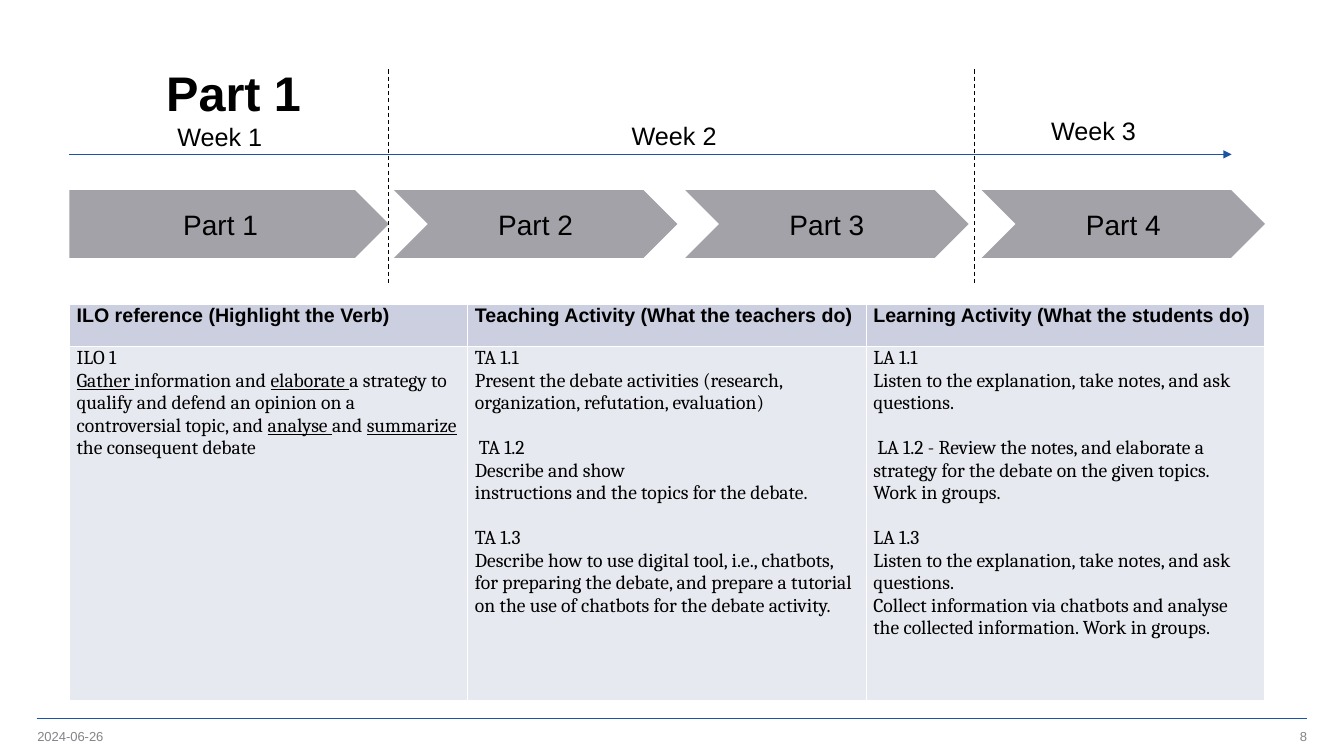
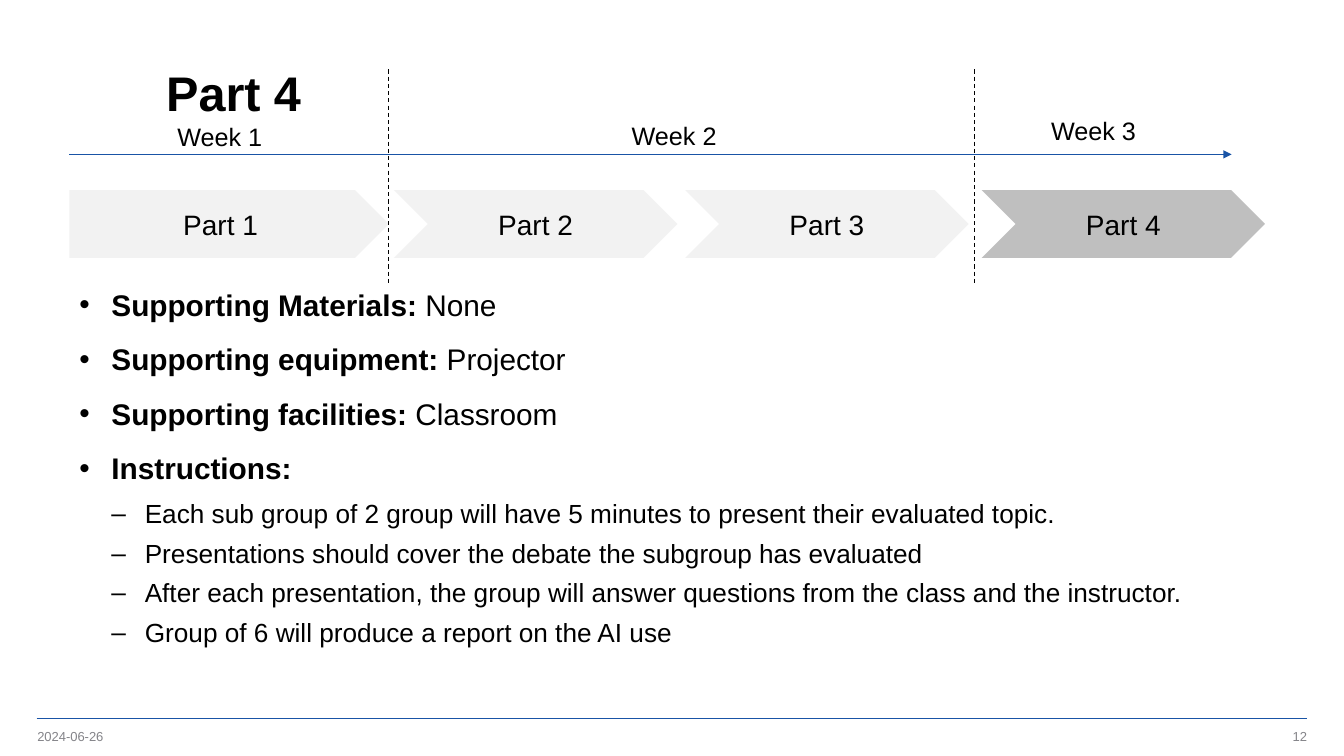
from lxml.etree import SubElement
from pptx import Presentation
from pptx.dml.color import RGBColor
from pptx.enum.dml import MSO_LINE_DASH_STYLE as Dash
from pptx.enum.shapes import MSO_CONNECTOR as Connector, MSO_SHAPE as Shape
from pptx.enum.text import MSO_ANCHOR as Anchor, PP_ALIGN as Align
from pptx.oxml.ns import qn
from pptx.util import Cm, Pt

BLACK = RGBColor(0x00, 0x00, 0x00)
WHITE = RGBColor(0xFF, 0xFF, 0xFF)
BLUE = RGBColor(0x19, 0x54, 0xA6)
FOOTER_GRAY = RGBColor(0x84, 0x84, 0x89)
STEP_GRAY = RGBColor(0xA2, 0xA2, 0xA8)
PALE_GRAY = RGBColor(0xF2, 0xF2, 0xF2)
ACTIVE_GRAY = RGBColor(0xBF, 0xBF, 0xBF)
HEADER_FILL = RGBColor(0xCB, 0xCF, 0xE0)
BODY_FILL = RGBColor(0xE7, 0xE9, 0xF0)

LEFT = 1.75
STEPS = [
    ("Part 1", Shape.PENTAGON, LEFT, 8.05),
    ("Part 2", Shape.CHEVRON, 9.93, 7.14),
    ("Part 3", Shape.CHEVRON, 17.27, 7.14),
    ("Part 4", Shape.CHEVRON, 24.74, 7.14),
]
WEEKS = [("Week 1", 4.22, 2.92), ("Week 2", 15.67, 2.9), ("Week 3", 26.24, 2.79)]
WEEK_BREAKS = [9.8, 24.56]

HEADERS = [
    "ILO reference (Highlight the Verb)",
    "Teaching Activity (What the teachers do)",
    "Learning Activity (What the students do)",
]
ACTIVITIES = [
    [
        [
            "ILO 1",
            "|Gather |information and |elaborate |a strategy to qualify and defend an opinion "
            "on a controversial topic, and |analyse |and |summarize |the consequent debate",
        ],
    ],
    [
        [
            "TA 1.1",
            "Present the debate activities (research, organization, refutation, evaluation)",
        ],
        [
            "TA 1.2",
            "Describe and show",
            "instructions and the topics for the debate.",
        ],
        [
            "TA 1.3",
            "Describe how to use digital tool, i.e., chatbots, for preparing the debate, "
            "and prepare a tutorial on the use of chatbots for the debate activity.",
        ],
    ],
    [
        [
            "LA 1.1",
            "Listen to the explanation, take notes, and ask questions.",
        ],
        [
            "LA 1.2 - Review the notes, and elaborate a strategy for the debate "
            "on the given topics. Work in groups.",
        ],
        [
            "LA 1.3",
            "Listen to the explanation, take notes, and ask questions.",
            "Collect information via chatbots and analyse the collected information. "
            "Work in groups.",
        ],
    ],
]
REQUIREMENTS = [
    "|Supporting Materials: |None",
    "|Supporting equipment: |Projector",
    "|Supporting facilities: |Classroom",
    "|Instructions:",
]
INSTRUCTIONS = [
    "Each sub group of 2 group will have 5 minutes to present their evaluated topic.",
    "Presentations should cover the debate the subgroup has evaluated",
    "After each presentation, the group will answer questions from the class and the instructor.",
    "Group of 6 will produce a report on the AI use",
]


class Lesson:
    def __init__(self):
        self.deck = Presentation()
        self.deck.slide_width, self.deck.slide_height = Cm(33.87), Cm(19.05)
        self.slide = None

    def start(self, title, number, fills):
        self.slide = self.deck.slides.add_slide(self.deck.slide_layouts[6])
        self.line(0.92, 18.11, 32.94, 18.11, BLUE, 1)
        heading = self.text(title, 3.94, 0.94, 27.97, 2.49, 34.7, bold=True, anchor=Anchor.MIDDLE)
        heading.line_spacing = 1.18
        for words, left, align in (("2024-06-26", 0.94, Align.LEFT), (number, 25.32, Align.RIGHT)):
            self.text(words, left, 18.34, 7.62, 0.43, 9.3, FOOTER_GRAY,
                      anchor=Anchor.MIDDLE, align=align, inset=0)
        self.timeline(fills)

    def timeline(self, fills):
        for (label, kind, left, width), fill in zip(STEPS, fills):
            self.step(label, kind, left, width, fill)
        self.line(LEFT, 3.89, 31.04, 3.89, BLUE, 0.75, arrow=True)
        for x in WEEK_BREAKS:
            self.line(x, LEFT, x, 7.2, BLACK, 0.75, dashed=True)
        for label, left, top in WEEKS:
            self.text(label, left, top, 2.67, 1.02, 18, wrap=False)

    def fill_para(self, para, words, size, color=BLACK, bold=False, name="Arial",
                  emphasis="bold"):
        para.font.name, para.font.size, para.font.bold = name, Pt(size), bold
        para.font.color.rgb = color
        for index, part in enumerate(words.split("|")):
            if part:
                span = para.add_run()
                span.text = part
                if index % 2 and emphasis == "bold":
                    span.font.bold = True
                elif index % 2:
                    span.font.underline = True

    def frame(self, left, top, width, height, anchor=Anchor.TOP, inset=None, wrap=True):
        box = self.slide.shapes.add_textbox(Cm(left), Cm(top), Cm(width), Cm(height))
        frame = box.text_frame
        frame.word_wrap, frame.vertical_anchor = wrap, anchor
        if inset is not None:
            frame.margin_left = frame.margin_right = Cm(inset)
            frame.margin_top = frame.margin_bottom = Cm(inset)
        return frame

    def text(self, words, left, top, width, height, size, color=BLACK, bold=False,
             align=Align.LEFT, **layout):
        para = self.frame(left, top, width, height, **layout).paragraphs[0]
        para.alignment = align
        self.fill_para(para, words, size, color, bold)
        return para

    def line(self, x1, y1, x2, y2, color, width, dashed=False, arrow=False):
        rule = self.slide.shapes.add_connector(Connector.STRAIGHT, Cm(x1), Cm(y1), Cm(x2), Cm(y2))
        rule.line.color.rgb, rule.line.width = color, Pt(width)
        if dashed:
            rule.line.dash_style = Dash.DASH
        properties = rule.element.spPr
        if arrow:
            SubElement(properties.find(qn("a:ln")), qn("a:tailEnd"), type="triangle")
        SubElement(properties, qn("a:effectLst"))

    def step(self, label, kind, left, width, fill):
        shape = self.slide.shapes.add_shape(kind, Cm(left), Cm(4.79), Cm(width), Cm(1.71))
        shape.shadow.inherit = False
        shape.fill.solid()
        shape.fill.fore_color.rgb = fill
        shape.line.fill.background()
        shape.text_frame.vertical_anchor = Anchor.MIDDLE
        para = shape.text_frame.paragraphs[0]
        para.alignment = Align.CENTER
        self.fill_para(para, label, 20)

    def cell(self, cell, blocks, fill, **style):
        cell.margin_left = cell.margin_right = Cm(0.18)
        cell.margin_top = cell.margin_bottom = 0
        properties = cell._tc.get_or_add_tcPr()
        for side in ("a:lnL", "a:lnR", "a:lnT", "a:lnB"):
            edge = SubElement(properties, qn(side), w=str(Pt(1)))
            SubElement(SubElement(edge, qn("a:solidFill")), qn("a:srgbClr"), val=str(WHITE))
        cell.fill.solid()
        cell.fill.fore_color.rgb = fill
        frame = cell.text_frame
        for number, block in enumerate(blocks):
            for index, words in enumerate(block):
                opening = index == 0
                para = frame.add_paragraph() if number or index else frame.paragraphs[0]
                if opening and number:
                    para.space_before = Pt(16)
                if opening and number == 1:
                    para._p.get_or_add_pPr().set("indent", str(Cm(0.1)))
                self.fill_para(para, words, 14, emphasis="underline", **style)

    def table(self, headers, columns):
        grid = self.slide.shapes.add_table(
            2, len(headers), Cm(LEFT), Cm(7.67), Cm(30.12), Cm(9.99)).table
        grid.first_row = grid.horz_banding = False
        grid.rows[0].height, grid.rows[1].height = Cm(1.07), Cm(8.92)
        for index, (header, blocks) in enumerate(zip(headers, columns)):
            grid.columns[index].width = Cm(10.04)
            self.cell(grid.cell(0, index), [[header]], HEADER_FILL, bold=True)
            self.cell(grid.cell(1, index), blocks, BODY_FILL, name="Cambria")

    def bullets(self, items, details):
        frame = self.frame(LEFT, 7.19, 30.2, 9.45)
        rows = [(words, 0, 16) for words in items]
        rows += [(words, 1, 8 if index else 10.7) for index, words in enumerate(details)]
        for index, (words, level, gap) in enumerate(rows):
            para = frame.add_paragraph() if index else frame.paragraphs[0]
            para.level, para.line_spacing = level, 0.9
            if index:
                para.space_before = Pt(gap)
            properties = para._p.get_or_add_pPr()
            properties.set("marL", str(Cm((0.81, 1.65)[level])))
            properties.set("indent", str(-Cm((0.81, 0.84)[level])))
            SubElement(SubElement(properties, qn("a:buClr")), qn("a:srgbClr"), val=str(BLACK))
            SubElement(properties, qn("a:buFont"), typeface="Arial")
            SubElement(properties, qn("a:buChar"), char="•–"[level])
            self.fill_para(para, words, (21.3, 18.7)[level])


def main():
    lesson = Lesson()
    lesson.start("Part 1", "8", [STEP_GRAY] * 4)
    lesson.table(HEADERS, ACTIVITIES)
    lesson.start("Part 4", "12", [PALE_GRAY] * 3 + [ACTIVE_GRAY])
    lesson.bullets(REQUIREMENTS, INSTRUCTIONS)
    lesson.deck.save("out.pptx")


if __name__ == "__main__":
    main()
